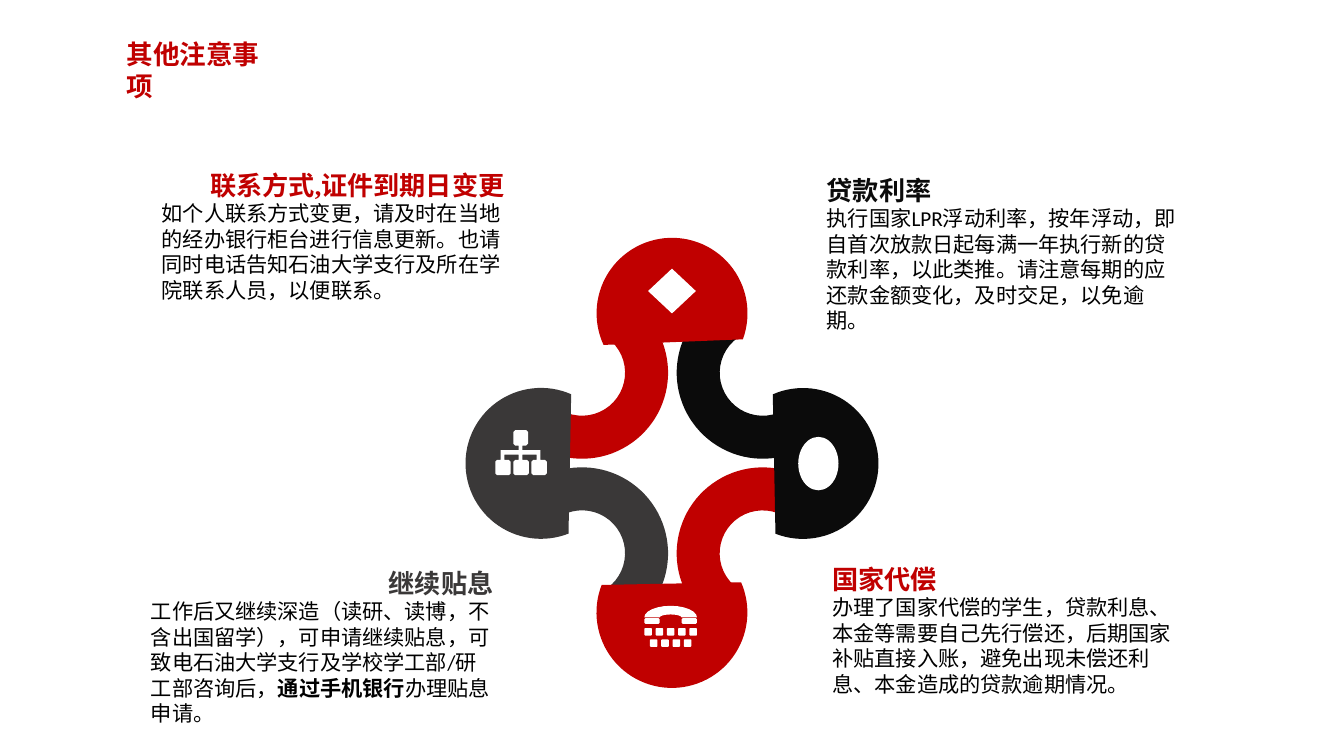
"""Build the slide on further points to note about student loans."""
import math
from dataclasses import dataclass

from pptx import Presentation
from pptx.dml.color import RGBColor
from pptx.enum import shapes, text
from pptx.util import Cm, Pt

COLORS = {"red": "C00000", "black": "0B0B0B", "grey": "3A3838", "white": "FFFFFF", "ink": "000000"}
PRESET = shapes.MSO_SHAPE
LEFT, RIGHT = text.PP_ALIGN.LEFT, text.PP_ALIGN.RIGHT
TITLE_FONT = {"name": "Noto Sans CJK SC", "size": Pt(20), "bold": True}
HEADING_FONT = {"name": "Times New Roman", "size": Pt(19.7), "bold": True}
BODY_FONT = {"name": "Calibri", "size": Pt(16), "bold": False}
STRONG_FONT = {**BODY_FONT, "bold": True}
FRAME = {"word_wrap": True, "auto_size": text.MSO_AUTO_SIZE.NONE,
         "vertical_anchor": text.MSO_ANCHOR.TOP}
Outline = list[tuple[float, float]]


@dataclass(frozen=True)
class Piece:
    preset: int
    x: float
    y: float
    width: float
    height: float
    color: str = "white"
    turn: float = 0


@dataclass(frozen=True)
class Note:
    x: float
    y: float
    width: float
    height: float
    heading: str
    color: str
    align: int
    body: tuple[str, ...]


def block(x: float, y: float, width: float, height: float, cut: float = 0) -> Outline:
    """Return a rectangle outline, with its corners cut if asked."""
    right, bottom = x + width, y + height
    if not cut:
        return [(x, y), (right, y), (right, bottom), (x, bottom)]
    return [(x + cut, y), (right - cut, y), (right, y + cut), (right, bottom - cut),
            (right - cut, bottom), (x + cut, bottom), (x, bottom - cut), (x, y + cut)]


def arch(x: float, y: float) -> Outline:
    """Return the outline of the phone handle around its bottom centre."""
    angles = [math.pi * step / 12 for step in range(13)]
    return ([(x - 0.7 * math.cos(a), y - 0.31 * math.sin(a)) for a in angles]
            + [(x + 0.29 * math.cos(a), y - 0.08 * math.sin(a)) for a in angles])


ARM, HEAD = 4.57, 4.01
RING = [
    Piece(PRESET.BLOCK_ARC, 13.18, 7.62, ARM, ARM, "red", 125.7),
    Piece(PRESET.BLOCK_ARC, 17.98, 7.62, ARM, ARM, "black", 234.3),
    Piece(PRESET.BLOCK_ARC, 13.18, 12.42, ARM, ARM, "grey", 54.3),
    Piece(PRESET.BLOCK_ARC, 17.98, 12.42, ARM, ARM, "red", 305.7),
    Piece(PRESET.CHORD, 15.85, 6.32, HEAD, HEAD, "red", 110.2),
    Piece(PRESET.CHORD, 12.37, 10.31, HEAD, HEAD, "grey", 23.6),
    Piece(PRESET.CHORD, 15.85, 14.27, HEAD, HEAD, "red", 291.4),
    Piece(PRESET.CHORD, 19.33, 10.31, HEAD, HEAD, "black", 201.4),
]
EMBLEMS = [
    Piece(PRESET.DIAMOND, 17.22, 7.14, 1.27, 1.19),
    Piece(PRESET.OVAL, 21.21, 11.61, 1.07, 1.42),
]
ORG_TREE = [
    block(13.64, 11.43, 0.39, 0.41, 0.05),
    block(13.78, 11.84, 0.1, 0.12),
    block(13.3, 11.96, 1.06, 0.12),
    *(block(13.3 + 0.48 * i, 12.08, 0.1, 0.14) for i in range(3)),
    *(block(13.16 + 0.48 * i, 12.22, 0.41, 0.41, 0.05) for i in range(3)),
]
PHONE = [
    arch(17.82, 16.41),
    *(block(x, 16.43, 0.41, 0.15, 0.03) for x in (17.12, 18.11)),
    *(block(x + 0.3 * i, y, 0.2, 0.2, 0.02)
      for x, y, count in ((17.12, 16.69, 5), (17.27, 16.99, 4)) for i in range(count)),
]

NOTES = [
    Note(21.72, 4.51, 10.03, 3.76, "贷款利率", "black", LEFT,
         ("执行国家LPR浮动利率，按年浮动，即自首次放款日起每满一年执行新的贷款利率，"
          "以此类推。请注意每期的应还款金额变化，及时交足，以免逾期。",)),
    Note(4.05, 4.37, 9.6, 3.84, "联系方式,证件到期日变更", "red", RIGHT,
         ("如个人联系方式变更，请及时在当地的经办银行柜台进行信息更新。"
          "也请同时电话告知石油大学支行及所在学院联系人员，以便联系。",)),
    Note(21.87, 14.84, 9.6, 3.76, "国家代偿", "red", LEFT,
         ("办理了国家代偿的学生，贷款利息、本金等需要自己先行偿还，后期国家补贴直接入账，"
          "避免出现未偿还利息、本金造成的贷款逾期情况。",)),
    Note(3.76, 14.95, 9.6, 5.05, "继续贴息", "grey", RIGHT,
         ("工作后又继续深造（读研、读博，不含出国留学），可申请继续贴息，"
          "可致电石油大学支行及学校学工部/研工部咨询后，",
          "通过手机银行", "办理贴息申请。")),
]


def apply(target: object, values: dict) -> None:
    """Set every named value on the target."""
    for name, value in values.items():
        setattr(target, name, value)


def paint(shape, color: str) -> None:
    """Give a shape a plain fill without line or shadow."""
    shape.shadow.inherit = False
    shape.fill.solid()
    shape.fill.fore_color.rgb = RGBColor.from_string(COLORS[color])
    shape.line.fill.background()


def write(paragraph, words: str, font: dict, color: str) -> None:
    """Append a formatted run to a paragraph."""
    run = paragraph.add_run()
    run.text = words
    apply(run.font, font)
    run.font.color.rgb = RGBColor.from_string(COLORS[color])


def draw_piece(slide, piece: Piece) -> None:
    """Draw one preset shape."""
    shape = slide.shapes.add_shape(piece.preset, Cm(piece.x), Cm(piece.y),
                                   Cm(piece.width), Cm(piece.height))
    shape.rotation = piece.turn
    paint(shape, piece.color)


def draw_icon(slide, outlines: list[Outline]) -> None:
    """Draw all outlines of an icon as one white shape."""
    builder = slide.shapes.build_freeform(*map(Cm, outlines[0][0]))
    for index, outline in enumerate(outlines):
        start, *rest = [(Cm(x), Cm(y)) for x, y in outline]
        if index:
            builder.move_to(*start)
        builder.add_line_segments(rest, close=True)
    paint(builder.convert_to_shape(), "white")


def draw_note(slide, note: Note) -> None:
    """Draw a heading with its explanation."""
    box = slide.shapes.add_textbox(Cm(note.x), Cm(note.y), Cm(note.width), Cm(note.height))
    apply(box.text_frame, FRAME)
    heading = box.text_frame.paragraphs[0]
    heading.alignment = note.align
    write(heading, note.heading, HEADING_FONT, note.color)
    body = box.text_frame.add_paragraph()
    body._p.get_or_add_pPr().set("hangingPunct", "0")
    for index, words in enumerate(note.body):
        write(body, words, STRONG_FONT if index % 2 else BODY_FONT, "ink")


def draw_title(slide, words: str) -> None:
    """Move and format the title placeholder."""
    title = slide.shapes.title
    apply(title, {"left": Cm(3.08), "top": Cm(0.89), "width": Cm(4.78), "height": Cm(1.17)})
    apply(title.text_frame, {**FRAME, "margin_left": Cm(0.28), "margin_right": Cm(0.28)})
    paragraph = title.text_frame.paragraphs[0]
    paragraph.alignment = LEFT
    write(paragraph, words, TITLE_FONT, "red")


def main() -> None:
    """Build and save the slide."""
    deck = Presentation()
    apply(deck, {"slide_width": Cm(35.71), "slide_height": Cm(20.09)})
    slide = deck.slides.add_slide(deck.slide_layouts[5])
    draw_title(slide, "其他注意事项")
    for piece in RING + EMBLEMS:
        draw_piece(slide, piece)
    for icon in (ORG_TREE, PHONE):
        draw_icon(slide, icon)
    for note in NOTES:
        draw_note(slide, note)
    deck.save("out.pptx")


if __name__ == "__main__":
    main()
